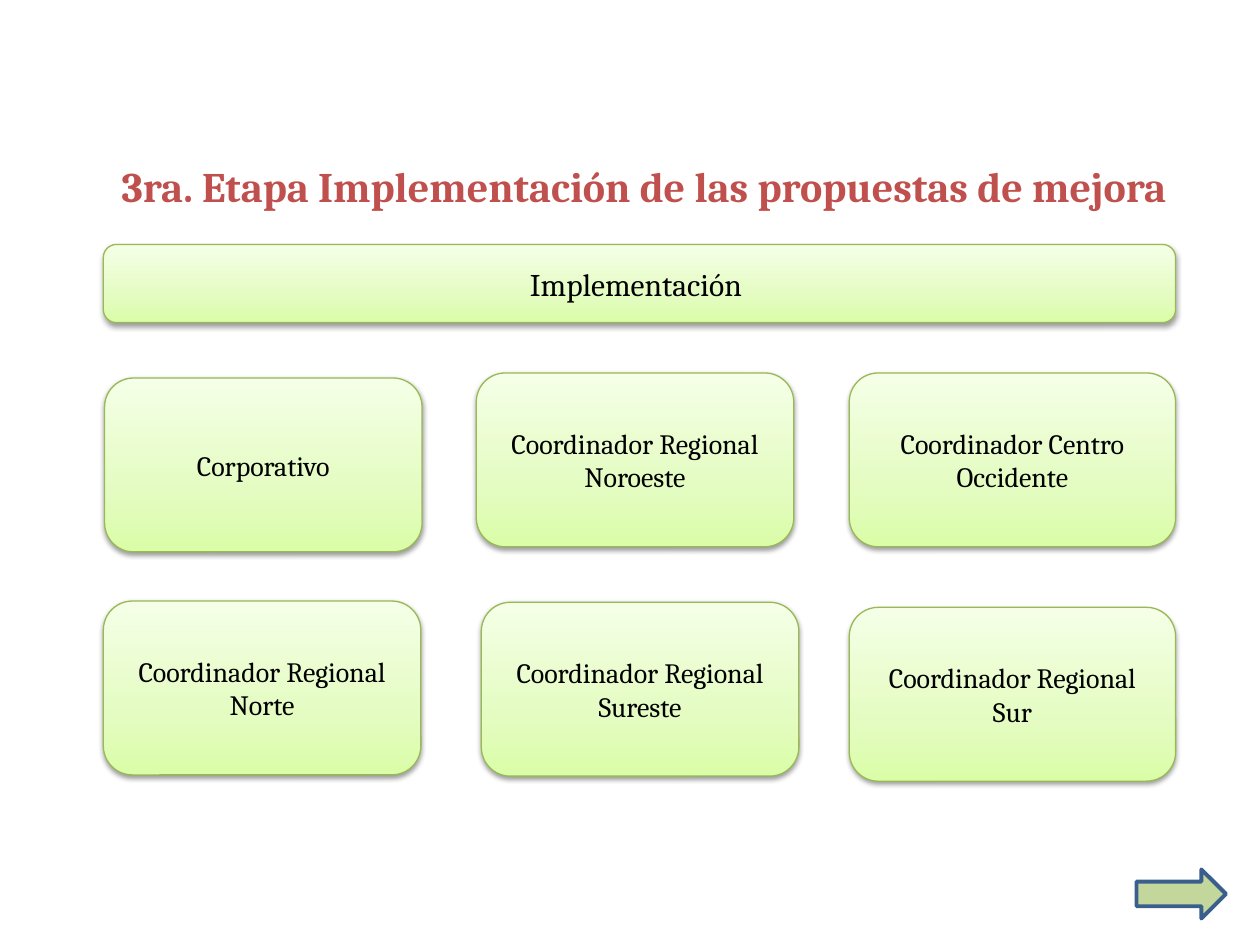
from copy import deepcopy
from lxml import etree
from pptx import Presentation
from pptx.dml.color import RGBColor
from pptx.enum.shapes import MSO_SHAPE
from pptx.enum.text import MSO_ANCHOR, PP_ALIGN
from pptx.oxml.ns import qn
from pptx.util import Inches, Pt

ROUND, ARROW = MSO_SHAPE.ROUNDED_RECTANGLE, MSO_SHAPE.RIGHT_ARROW
MIDDLE, BOTTOM, CENTER = MSO_ANCHOR.MIDDLE, MSO_ANCHOR.BOTTOM, PP_ALIGN.CENTER
W, H = 10, 7.5
LEFT, PITCH_X, BOX_W, LAST_W = 0.82, 2.96, 2.52, 2.59
TOP, PITCH_Y, BOX_H = 2.96, 1.81, 1.38
STOPS = [(0, "DAFDA7"), (0.35, "E4FCC2"), (1, "F5FFE7")]
SHADOW = {"blurRad": Pt(3.1), "dist": Pt(1.6), "dir": 5400000, "rotWithShape": 0}


def color(value):
    return RGBColor.from_string(value)


def write(sp, text, size, ink, anchor, bold=False):
    tf = sp.text_frame
    tf.word_wrap = True
    tf.vertical_anchor = anchor
    p = tf.paragraphs[0]
    p.alignment = CENTER
    r = p.add_run()
    r.text = text
    style = {"name": "Cambria", "size": Pt(size), "bold": bold}
    for key, value in style.items():
        setattr(r.font, key, value)
    r.font.color.rgb = color(ink)


prs = Presentation()
prs.slide_width, prs.slide_height = Inches(W), Inches(H)
s = prs.slides.add_slide(prs.slide_layouts[5])

title = s.shapes.title
place = {"left": 0.05 * W, "top": 0.145 * H, "width": 0.922 * W, "height": 0.085 * H}
for key, value in place.items():
    setattr(title, key, Inches(value))
write(title, "3ra. Etapa Implementación de las propuestas de mejora",
      24, "C0504D", BOTTOM, True)

boxes = [("Implementación ", LEFT, 1.94, 2 * PITCH_X + LAST_W, 0.62, 18)]
grid = [
    ("Corporativo", 0, 0, 0.01, 0.04),
    ("Coordinador Regional Noroeste", 1, 0, 0, 0),
    ("Coordinador Centro Occidente", 2, 0, 0, 0),
    ("Coordinador Regional Sureste", 1, 1, 0.04, 0.01),
    ("Coordinador Regional Sur", 2, 1, 0, 0.05),
    ("Coordinador Regional Norte", 0, 1, 0, 0),
]
for text, col, row, dx, dy in grid:
    width = LAST_W if col == 2 else BOX_W
    boxes.append((text, LEFT + col * PITCH_X + dx, TOP + row * PITCH_Y + dy,
                  width, BOX_H, 16))

for text, x, y, w, h, size in boxes:
    sp = s.shapes.add_shape(ROUND, Inches(x), Inches(y), Inches(w), Inches(h))
    sp.fill.gradient()
    sp.fill.gradient_angle = 90
    stop_list = sp._element.spPr.find(".//" + qn("a:gsLst"))
    stop_list.append(deepcopy(stop_list[0]))
    for stop, (position, value) in zip(sp.fill.gradient_stops, STOPS):
        stop.position = position
        stop.color.rgb = color(value)
    sp.line.color.rgb = color("98B955")
    sp.line.width = Pt(0.75)
    sp.shadow.inherit = False
    effects = sp._element.spPr.find(qn("a:effectLst"))
    shadow = etree.SubElement(effects, qn("a:outerShdw"),
                              {key: str(value) for key, value in SHADOW.items()})
    black = etree.SubElement(shadow, qn("a:srgbClr"), val="000000")
    etree.SubElement(black, qn("a:alpha"), val="38000")
    write(sp, text, size, "000000", MIDDLE)

arrow = s.shapes.add_shape(ARROW, Inches(0.902 * W), Inches(0.92 * H),
                           Inches(0.071 * W), Inches(0.052 * H))
arrow.shadow.inherit = False
arrow.fill.solid()
arrow.fill.fore_color.rgb = color("C3D69B")
arrow.line.color.rgb = color("3A5F8C")
arrow.line.width = Pt(2.25)

prs.save("out.pptx")
